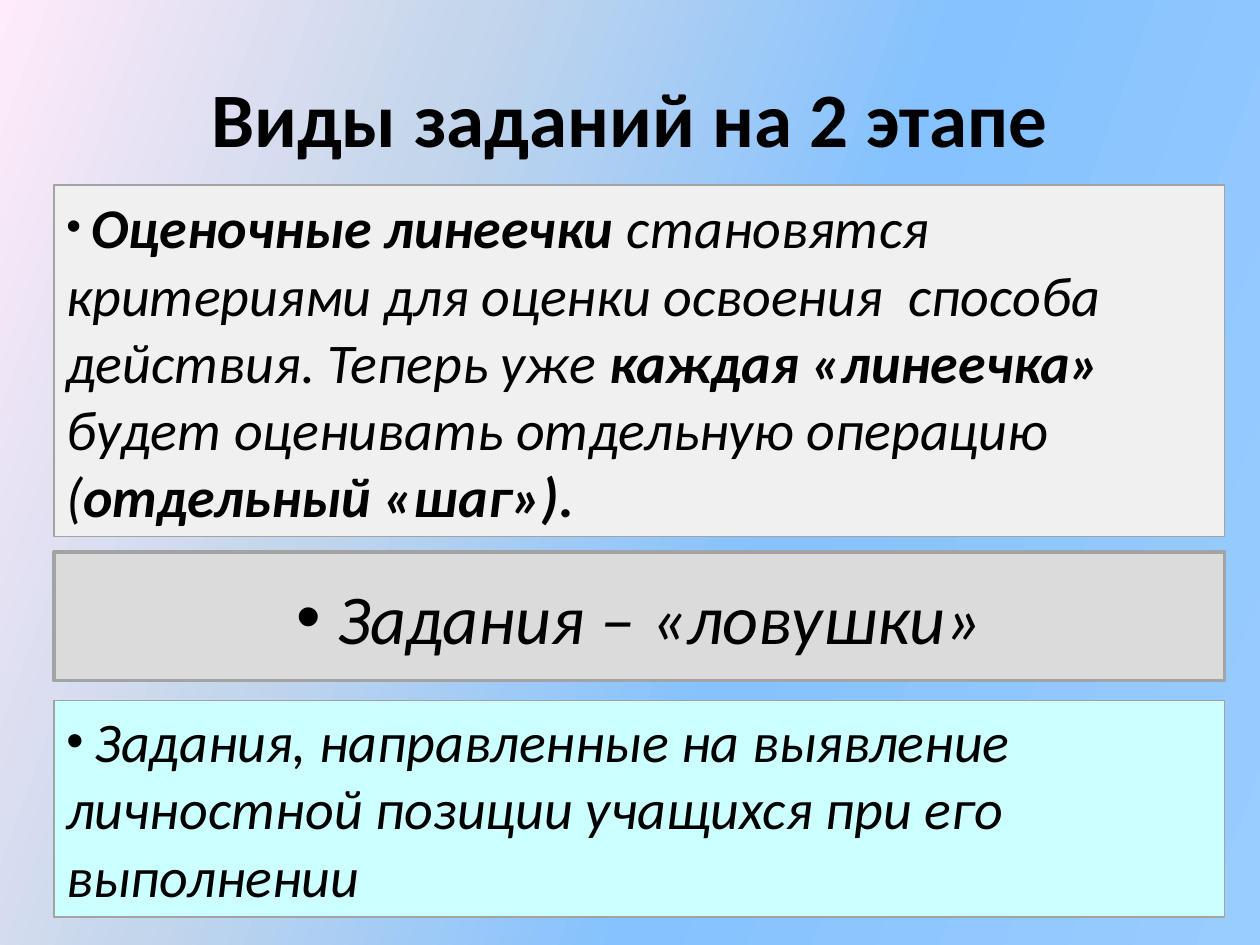
from lxml.etree import SubElement
from pptx import Presentation
from pptx.dml.color import RGBColor
from pptx.enum.shapes import MSO_SHAPE
from pptx.enum.text import MSO_ANCHOR, MSO_AUTO_SIZE, PP_ALIGN
from pptx.oxml.ns import qn
from pptx.util import Cm, Pt

BLACK = RGBColor(0x00, 0x00, 0x00)
BORDER = RGBColor(0xA3, 0xA3, 0xA3)
PALE_GRAY = RGBColor(0xF0, 0xF0, 0xF0)
GRAY = RGBColor(0xDB, 0xDB, 0xDB)
CYAN = RGBColor(0xCC, 0xFF, 0xFF)
SKY_STOPS = [
    (0, RGBColor(0x99, 0xCC, 0xFF)),
    (40, RGBColor(0x85, 0xC2, 0xFF)),
    (70, RGBColor(0xC4, 0xD6, 0xEB)),
    (100, RGBColor(0xFF, 0xEB, 0xFA)),
]
PANEL_LEFT, PANEL_WIDTH = 1.09, 23.6


def paint_background(page):
    fill = page.background.fill
    fill.gradient()
    fill.gradient_angle = 160
    stops = next(page.element.iter(qn("a:gsLst")))
    for stop in list(stops):
        stops.remove(stop)
    for percent, color in SKY_STOPS:
        stop = SubElement(stops, qn("a:gs"), pos=str(percent * 1000))
        SubElement(stop, qn("a:srgbClr"), val=str(color))


def add_span(para, text, size, bold=False, italic=False, font="Calibri"):
    span = para.add_run()
    span.text = text
    span.font.name = font
    span.font.size = Pt(size)
    span.font.bold = bold
    span.font.italic = italic
    span.font.color.rgb = BLACK


def add_bullet(para):
    properties = para._p.get_or_add_pPr()
    properties.set("marL", "0")
    properties.set("indent", "0")
    SubElement(properties, qn("a:buFont"), typeface="Arial")
    SubElement(properties, qn("a:buChar"), char="•")


def add_title(page, left, top, width, height):
    box = page.shapes.add_textbox(Cm(left), Cm(top), Cm(width), Cm(height))
    frame = box.text_frame
    frame.word_wrap = True
    frame.vertical_anchor = MSO_ANCHOR.MIDDLE
    para = frame.paragraphs[0]
    para.alignment = PP_ALIGN.CENTER
    add_span(para, "Виды заданий на 2 этапе", 44, bold=True)


def add_panel(page, top, height, color, border=0.75, anchor=MSO_ANCHOR.MIDDLE,
              align=PP_ALIGN.LEFT, grow=True):
    box = page.shapes.add_shape(MSO_SHAPE.RECTANGLE, Cm(PANEL_LEFT), Cm(top),
                                Cm(PANEL_WIDTH), Cm(height))
    box.shadow.inherit = False
    box.fill.solid()
    box.fill.fore_color.rgb = color
    box.line.color.rgb = BORDER
    box.line.width = Pt(border)
    frame = box.text_frame
    frame.word_wrap = True
    frame.vertical_anchor = anchor
    frame.auto_size = MSO_AUTO_SIZE.SHAPE_TO_FIT_TEXT if grow else MSO_AUTO_SIZE.NONE
    para = frame.paragraphs[0]
    para.alignment = align
    add_bullet(para)
    return para


def add_rulers_panel(page, top, height):
    para = add_panel(page, top, height, PALE_GRAY)
    add_span(para, " ", 24, font="Times New Roman")
    phrases = [
        "Оценочные линеечки ",
        "становятся критериями для оценки освоения  способа действия. Теперь уже ",
        "каждая «линеечка» ",
        "будет оценивать отдельную операцию (",
        "отдельный «шаг»).",
    ]
    for index, phrase in enumerate(phrases):
        add_span(para, phrase, 32, bold=index % 2 == 0, italic=True)


def add_traps_panel(page, top, height):
    para = add_panel(page, top, height, GRAY, border=2,
                     align=PP_ALIGN.CENTER, grow=False)
    add_span(para, " Задания – «ловушки»", 40, italic=True)


def add_position_panel(page, top, height):
    para = add_panel(page, top, height, CYAN, anchor=MSO_ANCHOR.TOP)
    add_span(para, " ", 28, italic=True)
    add_span(para, "Задания, направленные на выявление личностной позиции "
                   "учащихся при его выполнении", 32, italic=True)


def main():
    deck = Presentation()
    deck.slide_width = Cm(25.4)
    deck.slide_height = Cm(19.05)
    page = deck.slides.add_slide(deck.slide_layouts[6])
    paint_background(page)
    add_rulers_panel(page, 3.73, 7.09)
    add_position_panel(page, 14.12, 4.37)
    add_title(page, 1.27, 0.76, 22.86, 3.18)
    add_traps_panel(page, 11.13, 2.59)
    deck.save("out.pptx")


if __name__ == "__main__":
    main()
